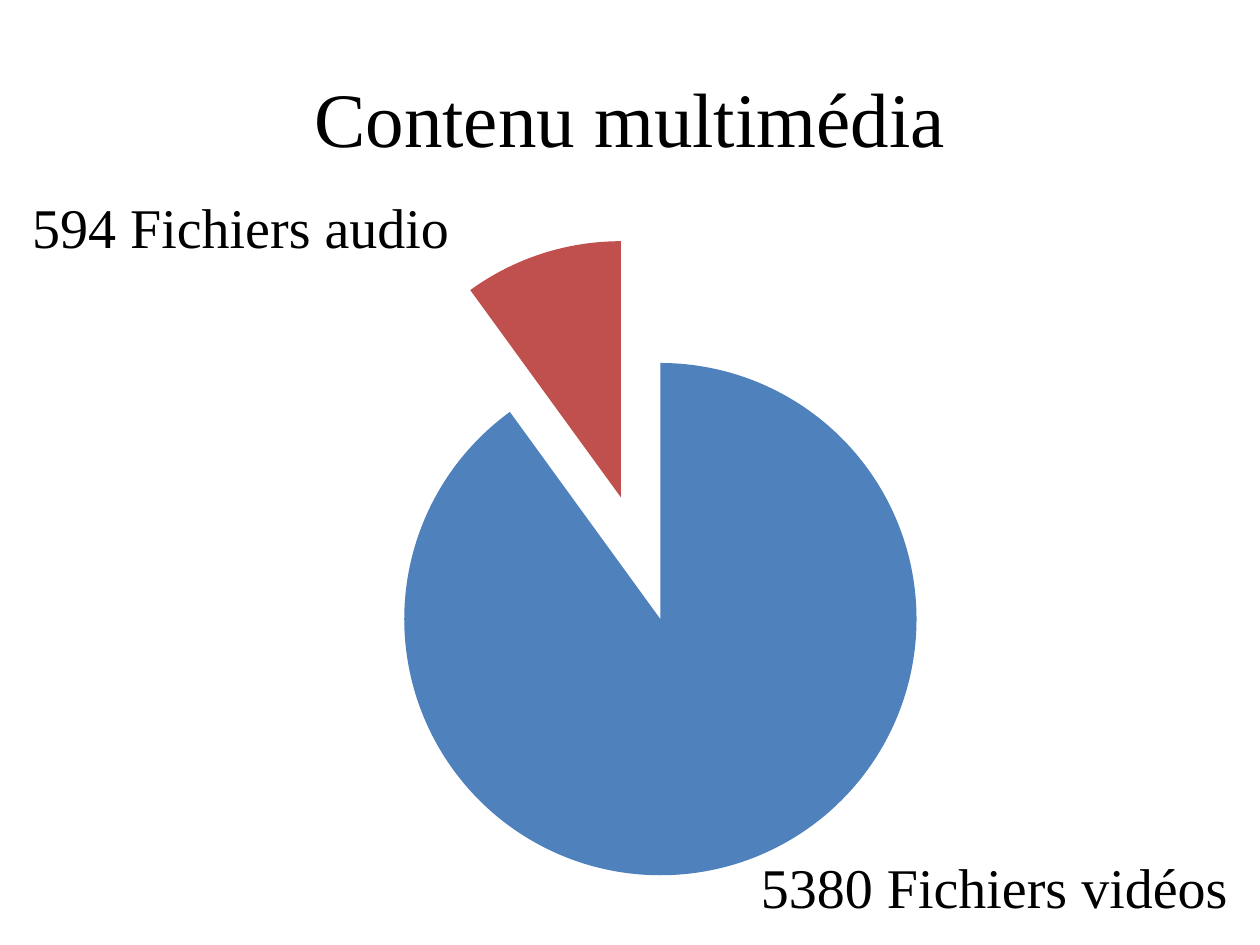
from pptx import Presentation
from pptx.chart.data import CategoryChartData as ChartData
from pptx.dml.color import RGBColor as RGB
from pptx.enum.chart import XL_CHART_TYPE as ChartType
from pptx.enum.text import MSO_ANCHOR as Anchor, MSO_AUTO_SIZE as AutoSize, PP_ALIGN as Align
from pptx.oxml import parse_xml
from pptx.oxml.ns import nsdecls
from pptx.util import Cm, Pt

BLACK = RGB(0x00, 0x00, 0x00)
BLUE = RGB(0x4F, 0x81, 0xBD)
RED = RGB(0xC0, 0x50, 0x4D)


class Deck:
    """Holds the style and the current slide."""

    face = "Times New Roman"

    def __init__(self):
        self.prs = Presentation()
        self.prs.slide_width, self.prs.slide_height = Cm(25.4), Cm(19.05)
        self.slide = self.prs.slides.add_slide(self.prs.slide_layouts[5])

    def style(self, font, size, face):
        font.name, font.size, font.color.rgb = face, Pt(size), BLACK

    def title(self, text, left, top, width, height):
        shape = self.slide.shapes.title
        shape.left, shape.top = Cm(left), Cm(top)
        shape.width, shape.height = Cm(width), Cm(height)
        frame = shape.text_frame
        frame.text, frame.vertical_anchor = text, Anchor.MIDDLE
        para = frame.paragraphs[0]
        para.alignment = Align.CENTER
        self.style(para.font, 44, self.face)

    def label(self, text, left, top, width, height):
        box = self.slide.shapes.add_textbox(Cm(left), Cm(top), Cm(width), Cm(height))
        frame = box.text_frame
        frame.text, frame.word_wrap = text, True
        frame.auto_size = AutoSize.SHAPE_TO_FIT_TEXT
        self.style(frame.paragraphs[0].font, 32, self.face)

    def pie(self, slices, burst, left, top, width, height):
        data = ChartData()
        data.categories = [name for name, _, _ in slices]
        data.add_series("Series 1", [value for _, value, _ in slices])
        chart = self.slide.shapes.add_chart(
            ChartType.PIE, Cm(left), Cm(top), Cm(width), Cm(height), data).chart
        chart.has_legend = chart.has_title = False
        self.style(chart.font, 18, "Calibri")
        plot = chart.plots[0]
        plot.vary_by_categories = True
        series = plot.series[0]
        for i, (_, _, color) in enumerate(slices):
            fill = series.points[i].format.fill
            fill.solid()
            fill.fore_color.rgb = color
        # Pull every slice out; the schema wants this before the points
        series.points[0].format  # the first point exists by now
        first = series._element.find("{*}dPt")
        first.addprevious(parse_xml(f'<c:explosion {nsdecls("c")} val="{burst}"/>'))


def main():
    deck = Deck()
    deck.title("Contenu multimédia", 1.27, 0.76, 22.86, 3.18)

    # Share of video and audio files
    deck.pie([("1", 90, BLUE), ("2", 10, RED)], 25, 1, 4.45, 23.83, 13.61)

    # Slice labels
    deck.label("5380 Fichiers vidéos", 15.09, 17.07, 9.93, 1.62)
    deck.label("594 Fichiers audio", 0.4, 3.76, 10.1, 1.62)

    deck.prs.save("out.pptx")


if __name__ == "__main__":
    main()
